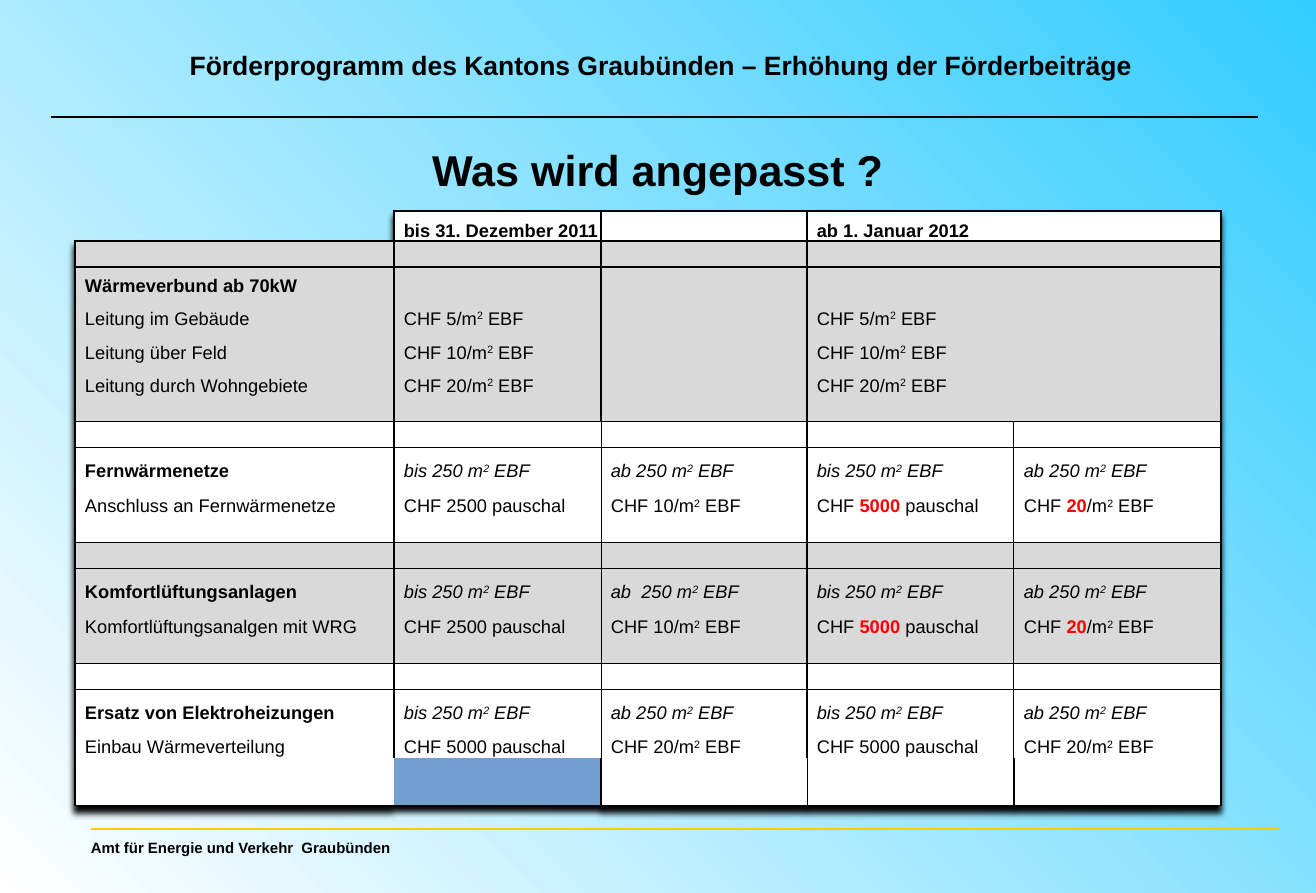
from dataclasses import dataclass
from typing import NamedTuple

from lxml.etree import SubElement
from pptx import Presentation
from pptx.dml.color import RGBColor
from pptx.enum.shapes import MSO_CONNECTOR
from pptx.enum.text import MSO_ANCHOR, PP_ALIGN
from pptx.oxml.ns import qn
from pptx.util import Emu, Pt

PX = 7658
FONT = "Arial"
COLORS = {"black": "000000", "white": "FFFFFF", "grey": "D9D9D9",
          "red": "FF0000", "gold": "FFCC00", "sky": "33CCFF"}
NO_TABLE_STYLE = "{2D5ABB26-0587-4C30-8999-92F81FD0307C}"
COLUMN_WIDTHS = (99, 220, 207, 206, 207, 207)
TEXT_SIZE = 11
THICK, THIN = 1, 0.5


class Box(NamedTuple):
    left: int
    top: int
    width: int
    height: int


class Run(NamedTuple):
    text: str
    raised: bool = False
    changed: bool = False


class Line(NamedTuple):
    cells: dict[int, list[Run]]
    bold: bool = False
    italic: bool = False


@dataclass
class Section:
    fill: str
    heights: tuple[int, ...]
    lines: list[Line]
    split: bool = True


def px(length: int) -> Emu:
    return Emu(length * PX)


def color(name: str) -> RGBColor:
    return RGBColor.from_string(COLORS[name])


def plain(text: str) -> list[Run]:
    return [Run(text)]


def per_area(*start: Run) -> list[Run]:
    """Runs that end in the unit m² EBF."""
    return [*start, Run("2", raised=True), Run(" EBF")]


def program(title: str, measure: str, amounts: list[list[Run]], fill: str,
            heights: tuple[int, ...], second_limit: str = "ab 250 m") -> Section:
    """A section whose amounts depend on the heated floor area."""
    limits = ("bis 250 m", second_limit, "bis 250 m", "ab 250 m")
    limit_cells = {column: per_area(Run(limit)) for column, limit in enumerate(limits, 2)}
    return Section(fill, heights, [
        Line({}),
        Line({0: plain(title)} | limit_cells, italic=True),
        Line({0: plain(measure)} | dict(enumerate(amounts, 2))),
        Line({}),
    ])


def pipe_line(label: str, francs: int) -> Line:
    amount = per_area(Run(f"CHF {francs}/m"))
    return Line({0: plain(label), 2: amount, 4: amount})


RAISED = [
    plain("CHF 2500 pauschal"),
    per_area(Run("CHF 10/m")),
    [Run("CHF "), Run("5000 ", changed=True), Run("pauschal")],
    per_area(Run("CHF "), Run("20", changed=True), Run("/m")),
]
UNCHANGED = [plain("CHF 5000 pauschal"), per_area(Run("CHF 20/m"))] * 2

SECTIONS = [
    Section("white", (30,), [
        Line({2: plain("bis 31. Dezember 2011"), 4: plain("ab 1. Januar 2012")}, bold=True),
    ], split=False),
    Section("grey", (26, 29, 33, 34, 33, 26), [
        Line({}),
        Line({0: plain("Wärmeverbund ab 70kW")}, bold=True),
        pipe_line("Leitung im Gebäude", 5),
        pipe_line("Leitung über Feld", 10),
        pipe_line("Leitung durch Wohngebiete", 20),
        Line({}),
    ], split=False),
    program("Fernwärmenetze", "Anschluss an Fernwärmenetze", RAISED,
            "white", (26, 34, 35, 26)),
    program("Komfortlüftungsanlagen", "Komfortlüftungsanalgen mit WRG", RAISED,
            "grey", (26, 34, 35, 26), second_limit="ab  250 m"),
    program("Ersatz von Elektroheizungen", "Einbau Wärmeverteilung", UNCHANGED,
            "white", (26, 34, 34, 26)),
]


def style_font(font, size: float, bold: bool = True, italic: bool = False) -> None:
    font.name, font.size, font.bold, font.italic = FONT, Pt(size), bold, italic
    font.color.rgb = color("black")


def place_text(shape, box: Box, text: str, size: float, align=PP_ALIGN.CENTER,
               anchor=MSO_ANCHOR.TOP) -> None:
    shape.left, shape.top, shape.width, shape.height = map(px, box)
    frame = shape.text_frame
    frame.word_wrap = False
    frame.vertical_anchor = anchor
    paragraph = frame.paragraphs[0]
    paragraph.text = text
    paragraph.alignment = align
    style_font(paragraph.font, size)


def add_rule(slide, left: int, right: int, y: int, color_name: str, width: float) -> None:
    rule = slide.shapes.add_connector(MSO_CONNECTOR.STRAIGHT, px(left), px(y), px(right), px(y))
    rule.line.color.rgb = color(color_name)
    rule.line.width = Pt(width)
    SubElement(rule._element.spPr, qn("a:effectLst"))


def add_solid(parent, color_name: str) -> None:
    fill = SubElement(parent, qn("a:solidFill"))
    SubElement(fill, qn("a:srgbClr"), val=COLORS[color_name])


def set_borders(cell, widths: dict[str, float]) -> None:
    """Draws the given sides, keyed L, R, T and B; must precede the cell's fill."""
    properties = cell._tc.get_or_add_tcPr()
    for side in "LRTB":
        if side in widths:
            border = SubElement(properties, qn(f"a:ln{side}"), w=str(Pt(widths[side])))
            add_solid(border, "black")


def border_widths(column: int, split: bool, first: bool, last: bool,
                  top: float, bottom: float) -> dict[str, float]:
    outer, inner = ("L", "R") if column % 2 == 0 else ("R", "L")
    widths = {outer: THICK}
    if split and column >= 2:
        widths[inner] = THIN
    if first:
        widths["T"] = top
    if last:
        widths["B"] = bottom
    return widths


def fill_cell(cell, runs: list[Run], bold: bool, italic: bool) -> None:
    cell.margin_left = px(10)
    cell.margin_right = cell.margin_top = cell.margin_bottom = 0
    cell.vertical_anchor = MSO_ANCHOR.BOTTOM
    paragraph = cell.text_frame.paragraphs[0]
    style_font(paragraph.font, TEXT_SIZE, bold, italic)
    for part in runs:
        run = paragraph.add_run()
        run.text = part.text
        if part.raised:
            run.font._element.set("baseline", "30000")
        if part.changed:
            run.font.bold = True
            run.font.color.rgb = color("red")
    if not runs:
        SubElement(paragraph._p, qn("a:endParaRPr"), sz=str(TEXT_SIZE * 100))


def add_table_shadow(table) -> None:
    properties = table._tbl.tblPr
    properties.find(qn("a:tableStyleId")).text = NO_TABLE_STYLE
    effects = SubElement(properties, qn("a:effectLst"))
    properties.insert(0, effects)
    shadow = SubElement(effects, qn("a:outerShdw"), blurRad="50800", dist=str(px(6)),
                        dir="5400000", algn="t", rotWithShape="0")
    SubElement(shadow, qn("a:srgbClr"), val=COLORS["black"])


def add_subsidy_table(slide, left: int, top: int) -> None:
    heights = [height for section in SECTIONS for height in section.heights]
    table = slide.shapes.add_table(len(heights), len(COLUMN_WIDTHS), px(left), px(top),
                                   px(sum(COLUMN_WIDTHS)), px(sum(heights))).table
    table.first_row = table.horz_banding = False
    add_table_shadow(table)
    for column, width in zip(table.columns, COLUMN_WIDTHS):
        column.width = px(width)
    for row, height in zip(table.rows, heights):
        row.height = px(height)

    row_index = 0
    for number, section in enumerate(SECTIONS):
        top_width = THICK if number <= 1 else THIN
        bottom_width = THICK if number in (0, len(SECTIONS) - 1) else THIN
        for position, line in enumerate(section.lines):
            last = position == len(section.lines) - 1
            for column in range(len(COLUMN_WIDTHS)):
                cell = table.cell(row_index, column)
                corner = number == 0 and column < 2
                widths = border_widths(column, section.split, position == 0, last,
                                       top_width, bottom_width)
                if corner:
                    widths = {"B": THICK} | ({"R": THICK} if column == 1 else {})
                set_borders(cell, widths)
                if corner:
                    cell.fill.background()
                else:
                    cell.fill.solid()
                    cell.fill.fore_color.rgb = color(section.fill)
                is_heading = line.bold or (line.italic and column == 0)
                fill_cell(cell, line.cells.get(column, []), is_heading,
                          line.italic and column > 0)
            table.cell(row_index, 0).merge(table.cell(row_index, 1))
            row_index += 1


def main() -> None:
    presentation = Presentation()
    presentation.slide_width, presentation.slide_height = px(1316), px(893)
    slide = presentation.slides.add_slide(presentation.slide_layouts[5])

    background = slide.background.fill
    background.gradient()
    background.gradient_angle = 45
    for stop, name in zip(background.gradient_stops, ("white", "sky")):
        stop.color.rgb = color(name)

    footer_box, header_box = Box(79, 833, 328, 30), Box(172, 43, 978, 44)
    place_text(slide.shapes.add_textbox(*map(px, footer_box)), footer_box,
               "Amt für Energie und Verkehr  Graubünden", 9, PP_ALIGN.LEFT, MSO_ANCHOR.MIDDLE)
    add_rule(slide, 91, 1279, 829, "gold", 1)
    add_subsidy_table(slide, 75, 211)
    add_rule(slide, 51, 1258, 117, "black", 0.75)
    place_text(slide.shapes.title, Box(418, 137, 480, 64), "Was wird angepasst ?", 26)
    place_text(slide.shapes.add_textbox(*map(px, header_box)), header_box,
               "Förderprogramm des Kantons Graubünden – Erhöhung der Förderbeiträge", 16)
    presentation.save("out.pptx")


if __name__ == "__main__":
    main()
